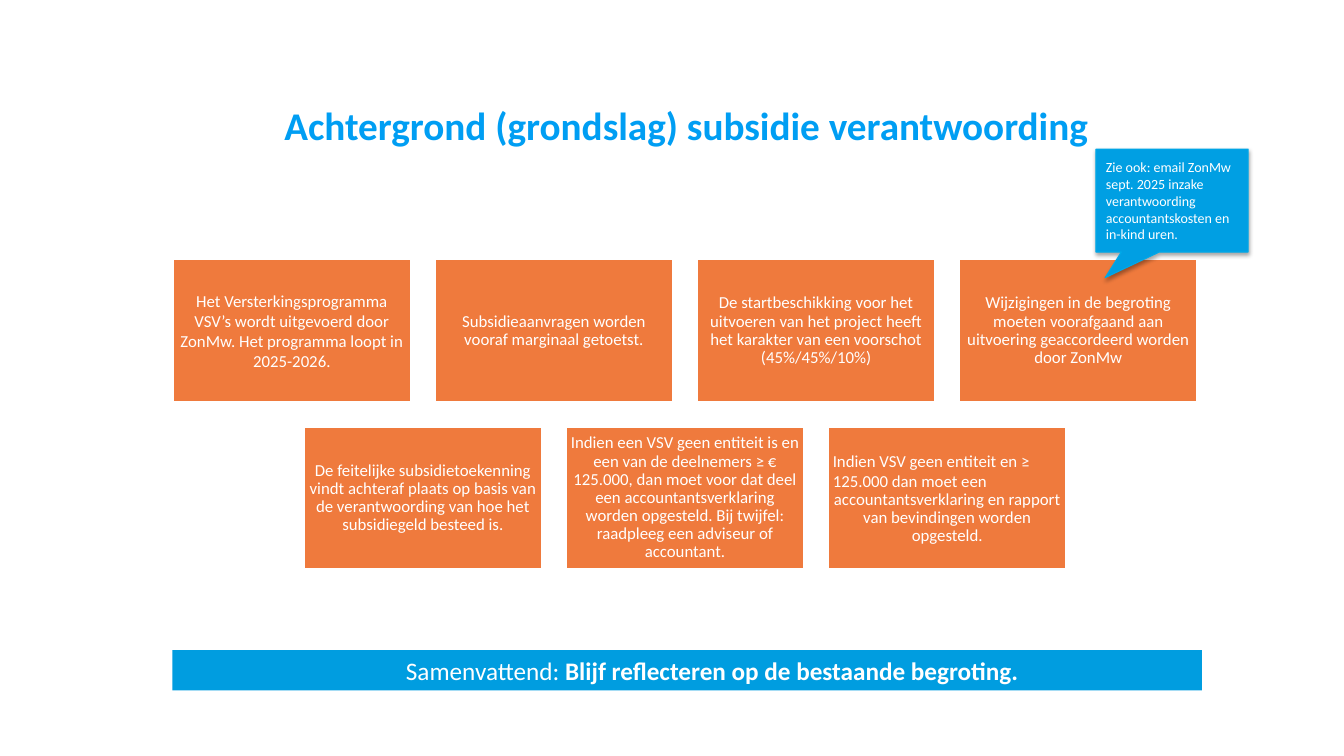
"""Build the slide on the background of subsidy accountability."""

from dataclasses import dataclass

from lxml.etree import SubElement
from pptx import Presentation
from pptx.dml.color import RGBColor
from pptx.enum.shapes import MSO_SHAPE as Shape
from pptx.enum.text import MSO_ANCHOR as Anchor, PP_ALIGN as Align
from pptx.oxml.ns import qn
from pptx.util import Pt

PX = 9144
COLOURS = {
    "title": "009EF3",
    "card": "EF7A3D",
    "bar": "009DE0",
    "callout": "009FE3",
    "callout_line": "00A9E9",
    "white": "FFFFFF",
    "shadow": "000000",
}
CARD_WIDTH, CARD_HEIGHT = 237, 142
COLUMN_STEP, ROW_STEP = 260, 166
CARDS_LEFT, CARDS_TOP = 171, 257
COLUMNS = 4


@dataclass(frozen=True)
class Line:
    text: str
    size: int = 12
    align: Align = Align.CENTER
    spacing: float = 0.9
    bold: bool = False
    colour: str = "white"


@dataclass(frozen=True)
class Box:
    left: int
    top: int
    width: int
    height: int
    fill: str
    line: str | None = None
    line_width: float = 0
    kind: Shape = Shape.RECTANGLE


CARD_ROWS = [
    [
        [Line("Het Versterkingsprogramma VSV’s wordt uitgevoerd door ZonMw. "
              "Het programma loopt in 2025-2026.", spacing=1.0)],
        [Line("Subsidieaanvragen worden vooraf marginaal getoetst.")],
        [Line("De startbeschikking voor het uitvoeren van het project heeft "
              "het karakter van een voorschot (45%/45%/10%)")],
        [Line("Wijzigingen in de begroting moeten voorafgaand aan uitvoering "
              "geaccordeerd worden door ZonMw")],
    ],
    [
        [Line("De feitelijke subsidietoekenning vindt achteraf plaats op basis van "
              "de verantwoording van hoe het subsidiegeld besteed is.")],
        [Line("Indien een VSV geen entiteit is en een van de deelnemers ≥ € 125.000, "
              "dan moet voor dat deel een accountantsverklaring worden opgesteld. "
              "Bij twijfel: raadpleeg een adviseur of accountant.")],
        [Line("Indien VSV geen entiteit en ≥ 125.000 dan moet een",
              align=Align.LEFT, spacing=1.0),
         Line("accountantsverklaring en rapport van bevindingen worden opgesteld.")],
    ],
]


def rgb(name: str) -> RGBColor:
    return RGBColor.from_string(COLOURS[name])


def write(shape, lines: list[Line], inset_x: int, inset_y: int) -> None:
    frame = shape.text_frame
    frame.word_wrap = True
    frame.vertical_anchor = Anchor.MIDDLE
    frame.margin_left = frame.margin_right = inset_x * PX
    frame.margin_top = frame.margin_bottom = inset_y * PX
    for index, line in enumerate(lines):
        paragraph = frame.add_paragraph() if index else frame.paragraphs[0]
        paragraph.text = line.text
        paragraph.alignment = line.align
        paragraph.line_spacing = line.spacing
        font = paragraph.font
        font.name, font.size, font.bold = "Calibri", Pt(line.size), line.bold
        font.color.rgb = rgb(line.colour)


def draw_box(slide, box: Box):
    shape = slide.shapes.add_shape(
        box.kind, box.left * PX, box.top * PX, box.width * PX, box.height * PX)
    shape.shadow.inherit = False
    shape.fill.solid()
    shape.fill.fore_color.rgb = rgb(box.fill)
    if box.line:
        shape.line.color.rgb = rgb(box.line)
        shape.line.width = Pt(box.line_width)
    else:
        shape.line.fill.background()
    return shape


def draw_title(slide) -> None:
    title = slide.shapes.add_textbox(170 * PX, 105 * PX, 1021 * PX, 43 * PX)
    line = Line("Achtergrond (grondslag) subsidie verantwoording",
                size=28, bold=True, colour="title")
    write(title, [line], 0, 0)


def draw_cards(slide) -> None:
    for row, cards in enumerate(CARD_ROWS):
        row_left = CARDS_LEFT + (COLUMNS - len(cards)) * COLUMN_STEP // 2
        for column, lines in enumerate(cards):
            box = Box(row_left + column * COLUMN_STEP, CARDS_TOP + row * ROW_STEP,
                      CARD_WIDTH, CARD_HEIGHT, "card", "white", 2)
            write(draw_box(slide, box), lines, 5, 5)


def draw_summary(slide) -> None:
    bar = draw_box(slide, Box(171, 645, 1021, 40, "bar"))
    write(bar, [Line("Samenvattend: ", size=18, spacing=1.0)], 10, 5)
    paragraph = bar.text_frame.paragraphs[0]
    paragraph.level = 1
    properties = paragraph._p.get_or_add_pPr()
    properties.set("marL", str(50 * PX))
    properties.set("indent", "0")
    conclusion = paragraph.add_run()
    conclusion.text = "Blijf reflecteren op de bestaande begroting."
    conclusion.font.bold = True


def add_shadow(shape) -> None:
    effects = shape._element.spPr.find(qn("a:effectLst"))
    shadow = SubElement(effects, qn("a:outerShdw"), blurRad=str(Pt(3.1)),
                        dist=str(Pt(1.8)), dir="5400000", rotWithShape="0")
    colour = SubElement(shadow, qn("a:srgbClr"), val=COLOURS["shadow"])
    SubElement(colour, qn("a:alpha"), val="35000")


def draw_callout(slide) -> None:
    box = Box(1087, 148, 151, 102, "callout", "callout_line", 0.75,
              Shape.RECTANGULAR_CALLOUT)
    callout = draw_box(slide, box)
    callout.adjustments[0] = -0.44
    callout.adjustments[1] = 0.75
    add_shadow(callout)
    line = Line("Zie ook: email ZonMw sept. 2025 inzake verantwoording "
                "accountantskosten en in-kind uren.",
                size=10, align=Align.LEFT, spacing=1.0)
    write(callout, [line], 10, 5)


def main() -> None:
    presentation = Presentation()
    presentation.slide_width, presentation.slide_height = 1333 * PX, 750 * PX
    slide = presentation.slides.add_slide(presentation.slide_layouts[6])
    draw_title(slide)
    draw_cards(slide)
    draw_summary(slide)
    draw_callout(slide)
    presentation.save("out.pptx")


if __name__ == "__main__":
    main()
